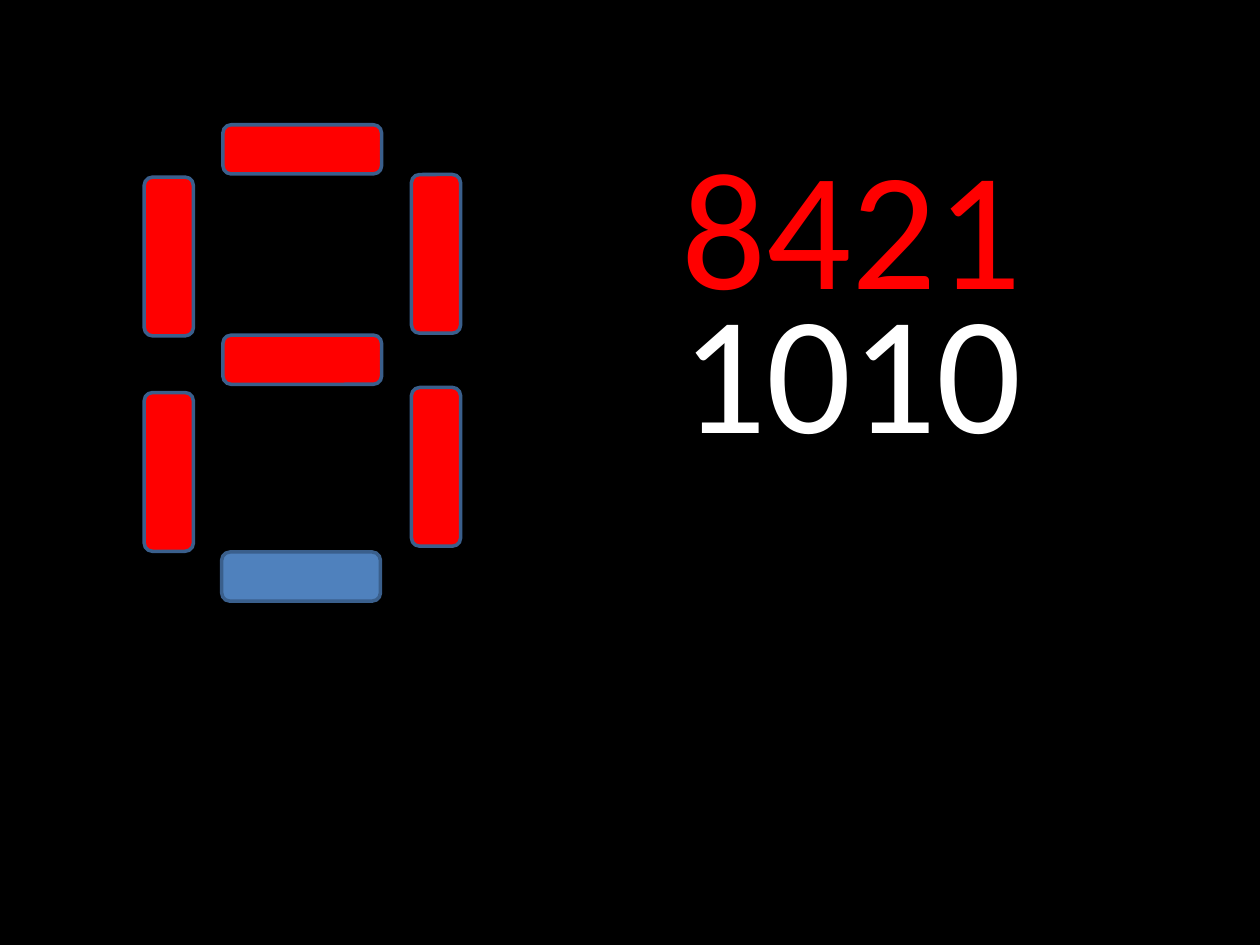
from dataclasses import dataclass

from pptx import Presentation
from pptx.dml.color import RGBColor
from pptx.enum import shapes, text
from pptx.util import Pt


@dataclass(frozen=True)
class Theme:
    background: str = "000000"
    lit: str = "FF0000"
    unlit: str = "4F81BD"
    outline: str = "3A5F8C"
    bits: str = "FFFFFF"
    font: str = "Calibri"
    digit_size: int = 96
    outline_width: int = 2


THEME = Theme()
SEGMENT_LENGTH, SEGMENT_THICKNESS = 90.7, 28.1
TEXT_LEFT, TEXT_WIDTH = 382.3, 277.9

# Left and top before rotation, rotation, lit
SEGMENTS = [
    (127.4, 71.3, 0, True),     # top
    (127.4, 191.5, 0, True),    # middle
    (126.7, 315.4, 0, False),   # bottom
    (203.8, 252.7, 270, True),  # lower right
    (51.1, 255.6, 270, True),   # lower left
    (203.8, 131, 270, True),    # upper right
    (51.1, 132.5, 270, True),   # upper left
]

# Text, top, height, colour
DIGIT_ROWS = [
    ("8421", 66.2, 239.8, THEME.lit),
    ("1010", 148.3, 123.8, THEME.bits),
]


def rgb(colour):
    return RGBColor.from_string(colour)


def add_segment(slide, left, top, rotation, lit):
    segment = slide.shapes.add_shape(
        shapes.MSO_SHAPE.ROUNDED_RECTANGLE,
        Pt(left), Pt(top), Pt(SEGMENT_LENGTH), Pt(SEGMENT_THICKNESS))
    segment.rotation = rotation
    segment.shadow.inherit = False
    segment.fill.solid()
    segment.fill.fore_color.rgb = rgb(THEME.lit if lit else THEME.unlit)
    segment.line.color.rgb = rgb(THEME.outline)
    segment.line.width = Pt(THEME.outline_width)


def add_digits(slide, digits, top, height, colour):
    box = slide.shapes.add_textbox(
        Pt(TEXT_LEFT), Pt(top), Pt(TEXT_WIDTH), Pt(height))
    frame = box.text_frame
    frame.word_wrap = True
    frame.vertical_anchor = text.MSO_ANCHOR.TOP
    paragraph = frame.paragraphs[0]
    paragraph.text = digits
    paragraph.alignment = text.PP_ALIGN.LEFT
    paragraph.font.name = THEME.font
    paragraph.font.size = Pt(THEME.digit_size)
    paragraph.font.color.rgb = rgb(colour)


def main():
    presentation = Presentation()
    presentation.slide_width, presentation.slide_height = Pt(720), Pt(540)
    slide = presentation.slides.add_slide(presentation.slide_layouts[6])
    slide.background.fill.solid()
    slide.background.fill.fore_color.rgb = rgb(THEME.background)

    weights, bits = DIGIT_ROWS
    add_digits(slide, *weights)
    for segment in SEGMENTS:
        add_segment(slide, *segment)
    add_digits(slide, *bits)
    presentation.save("out.pptx")


if __name__ == "__main__":
    main()
